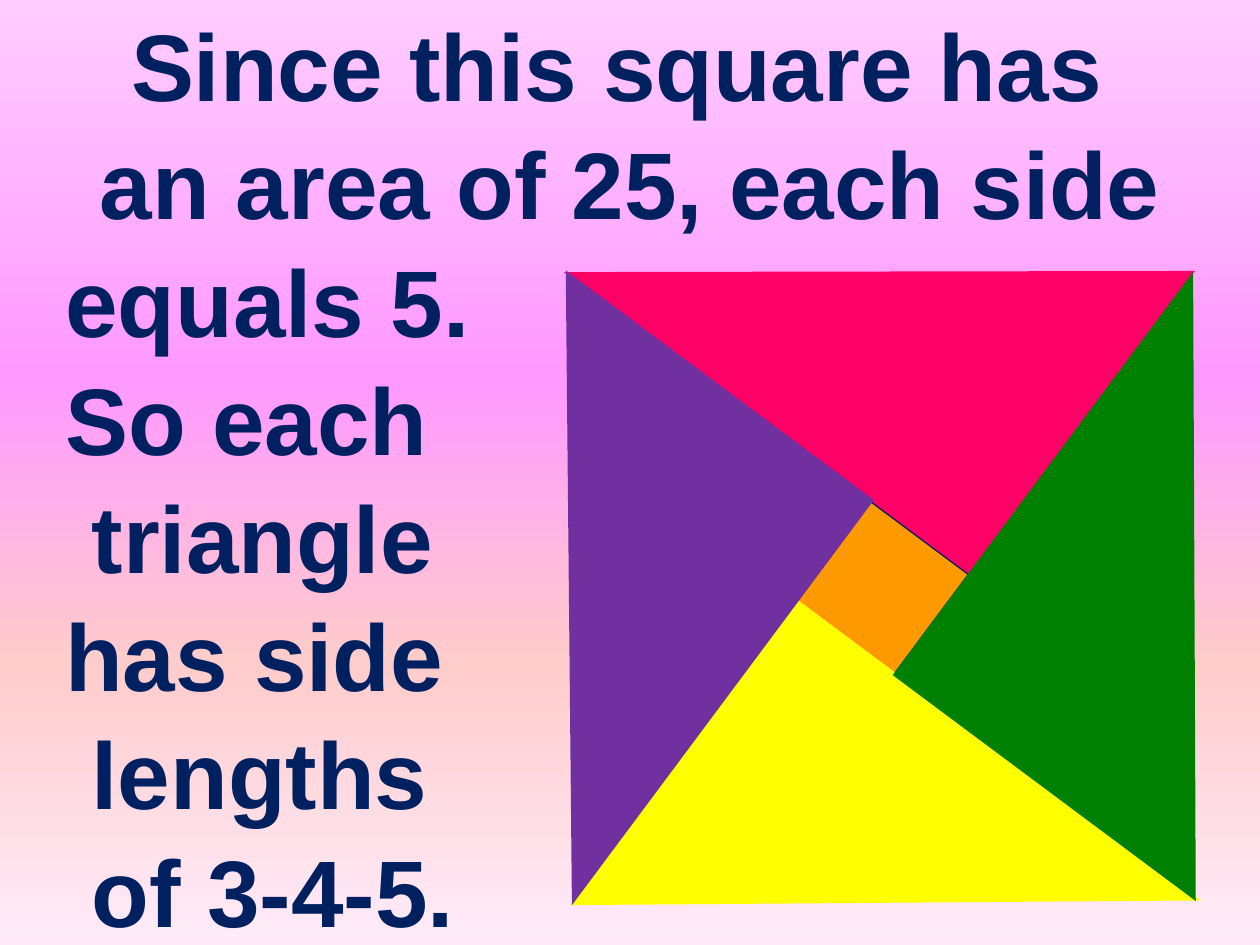
from lxml.etree import SubElement
from pptx import Presentation
from pptx.dml.color import RGBColor
from pptx.enum.shapes import MSO_SHAPE
from pptx.enum.text import MSO_ANCHOR, PP_ALIGN
from pptx.oxml.ns import qn
from pptx.util import Inches, Pt

THEME = {
    "font": "Arial", "size": 54, "spacing": 1.043, "ink": "002060",
    "background": [(0, "FFCCFF"), (40, "FF99FF"), (70, "FFCCCC"), (100, "FFEBFA")],
    "center": "FF9900", "top": "FF0066", "bottom": "FFFF00",
    "right": "008000", "left": "7030A0",
}

# Text lines: wording, left indent in inches (None = centred)
LINES = [
    ("Since this square has ", None),
    ("an area of 25, each side", None),
    ("equals 5.", 0.42),
    ("So each", 0.42),
    ("triangle", 0.63),
    ("has side", 0.42),
    ("lengths", 0.63),
    ("of 3-4-5.", 0.63),
]

# Pieces of the big square: colour name, shape, left, top, width, height, turn
TILT = 36.7
PIECES = [
    ("center", MSO_SHAPE.RECTANGLE, 6.5, 4.16, 1, 1, 0),
    ("top", MSO_SHAPE.RIGHT_TRIANGLE, 5.48, 0.15, 3, 4.01, 270),
    ("bottom", MSO_SHAPE.RIGHT_TRIANGLE, 5.52, 5.17, 3.02, 3.99, 90),
    ("right", MSO_SHAPE.RIGHT_TRIANGLE, 7.98, 2.66, 3, 3.99, 0),
    ("left", MSO_SHAPE.RIGHT_TRIANGLE, 2.99, 2.66, 3.05, 4.01, 180),
]


def color(name):
    return RGBColor.from_string(THEME[name])


def paint_background(slide):
    fill = slide.background.fill
    fill.gradient()
    fill.gradient_angle = 270
    stops = slide.element.find(".//" + qn("a:gsLst"))
    for stop in list(stops):
        stops.remove(stop)
    for percent, rgb in THEME["background"]:
        stop = SubElement(stops, qn("a:gs"), pos=str(percent * 1000))
        SubElement(stop, qn("a:srgbClr"), val=rgb)


def add_text(slide):
    tf = slide.shapes.add_textbox(Inches(0), Inches(0.08), Inches(10), Inches(7.37)).text_frame
    tf.word_wrap = True
    tf.vertical_anchor = MSO_ANCHOR.MIDDLE
    for i, (words, indent) in enumerate(LINES):
        p = tf.paragraphs[0] if i == 0 else tf.add_paragraph()
        p.line_spacing = THEME["spacing"]
        if indent is None:
            p.alignment = PP_ALIGN.CENTER
        else:
            p.alignment = PP_ALIGN.LEFT
            p._p.get_or_add_pPr().set("marL", str(Inches(indent)))
        r = p.add_run()
        r.text = words
        r.font.name = THEME["font"]
        r.font.size = Pt(THEME["size"])
        r.font.bold = True
        r.font.color.rgb = color("ink")


def add_square(slide):
    group = slide.shapes.add_group_shape()
    for name, kind, left, top, width, height, turn in PIECES:
        sp = group.shapes.add_shape(kind, *map(Inches, (left, top, width, height)))
        sp.rotation = (TILT + turn) % 360
        sp.shadow.inherit = False
        sp.fill.solid()
        sp.fill.fore_color.rgb = color(name)
        if name == "center":
            sp.line.color.rgb = color("ink")
            sp.line.width = Pt(2.25)
        else:
            sp.line.fill.background()


def main():
    prs = Presentation()
    prs.slide_width, prs.slide_height = Inches(10), Inches(7.5)
    slide = prs.slides.add_slide(prs.slide_layouts[6])
    paint_background(slide)
    add_text(slide)
    add_square(slide)
    prs.save("out.pptx")


if __name__ == "__main__":
    main()
